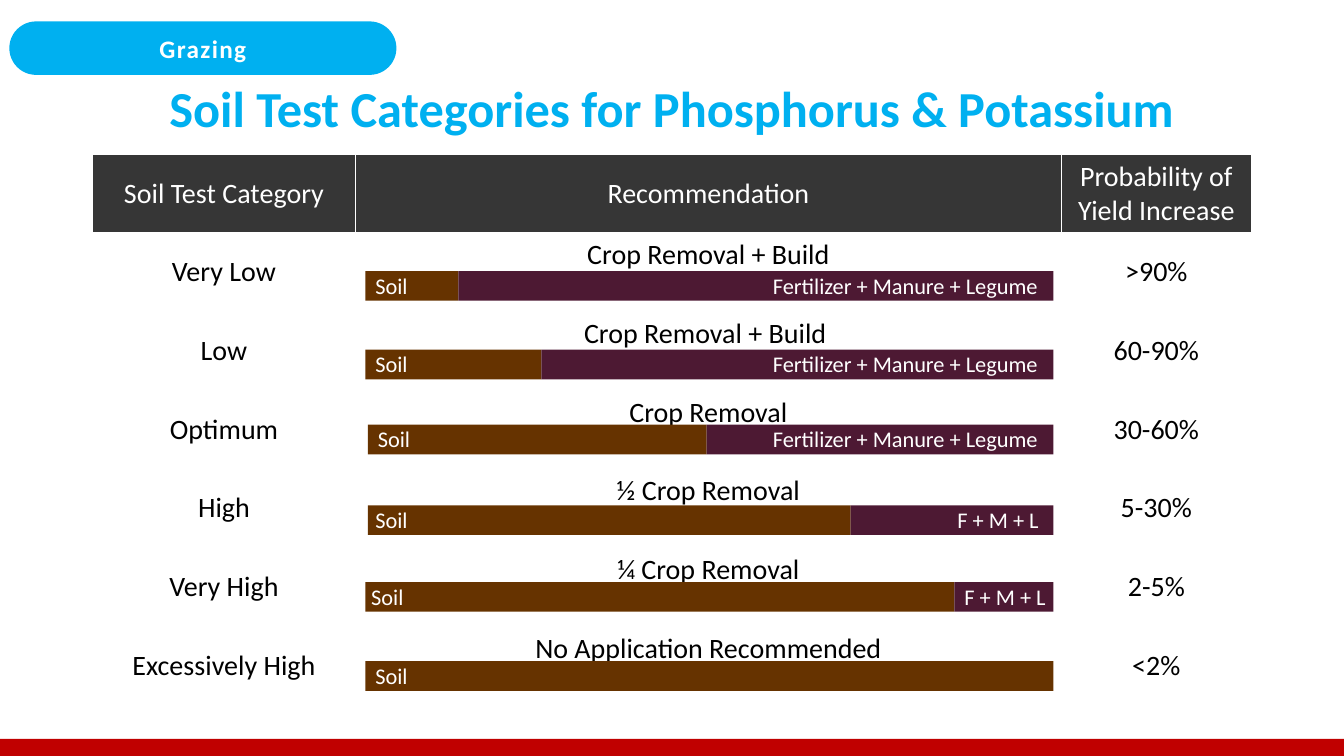
from collections import namedtuple
from dataclasses import dataclass

from lxml import etree
from pptx import Presentation
from pptx.dml.color import RGBColor
from pptx.enum.shapes import MSO_SHAPE
from pptx.enum.text import MSO_ANCHOR, MSO_AUTO_SIZE, PP_ALIGN
from pptx.util import Pt

RECTANGLE = MSO_SHAPE.RECTANGLE
ROUNDED = MSO_SHAPE.ROUNDED_RECTANGLE
LEFT, CENTER = PP_ALIGN.LEFT, PP_ALIGN.CENTER
TOP, MIDDLE = MSO_ANCHOR.TOP, MSO_ANCHOR.MIDDLE
FIT_SHAPE = MSO_AUTO_SIZE.SHAPE_TO_FIT_TEXT
TITLE_ONLY = 5

Box = namedtuple("Box", "left top width height")
Category = namedtuple(
    "Category", "name advice probability bar_left bar_top split label_left source")


@dataclass(frozen=True)
class Theme:
    font: str = "Calibri"
    white: str = "FFFFFF"
    black: str = "000000"
    sky: str = "00B0F0"
    red: str = "C00000"
    header: str = "363636"
    soil: str = "663300"
    amendment: str = "4D1933"
    title_size: float = 36
    table_size: float = 20
    tab_size: float = 18
    label_size: float = 16


THEME = Theme()
PAGE = Box(0, 0, 960, 540)
TABLE = Box(66, 110.2, 828, 393.4)
COLUMN_WIDTHS = (188, 504, 136)
HEADINGS = ("Soil Test Category", "Recommendation", "Probability of Yield Increase")

BAR_RIGHT = 752.4
BAR_HEIGHT = 21.2
LABEL_RISE = 3
LABEL_HEIGHT = 26.6
SOIL_LABEL_WIDTH = 43.5
FULL = "Fertilizer + Manure + Legume"
SHORT = "F + M + L"
LABEL_WIDTHS = {FULL: 207.4, SHORT: 75.6}

# Bar positions are measured from the page's left and top edges
CATEGORIES = (
    Category("Very Low", "Crop Removal + Build", ">90%", 261, 193.6, 327.4, 261, FULL),
    Category("Low", "Crop Removal + Build ", "60-90%", 261, 249.8, 386.8, 261, FULL),
    Category("Optimum", "Crop Removal", "30-60%", 262.8, 303.4, 504.7, 262.8, FULL),
    Category("High", "½ Crop Removal", "5-30%", 262.8, 361, 607.6, 261, SHORT),
    Category("Very High", "¼ Crop Removal", "2-5%", 261, 415.8, 681.8, 258, SHORT),
    Category("Excessively High", "No Application Recommended", "<2%",
             261, 472.3, BAR_RIGHT, 261, None),
)


def color(value):
    return RGBColor.from_string(value)


def write(frame, text, *, size, ink=THEME.white, bold=False, align=LEFT,
          anchor=TOP, spacing=None, tracking=None):
    """Put one formatted paragraph into a text frame."""
    frame.word_wrap = True
    frame.vertical_anchor = anchor
    para = frame.paragraphs[0]
    para.alignment = align
    if spacing:
        para.line_spacing = spacing
    span = para.add_run()
    span.text = text
    span.font.name = THEME.font
    span.font.size = Pt(size)
    span.font.bold = bold
    span.font.color.rgb = color(ink)
    if tracking:
        span.font._element.set("spc", str(round(tracking * 100)))


def add_block(page, box, fill, kind=RECTANGLE):
    block = page.shapes.add_shape(kind, *map(Pt, box))
    block.shadow.inherit = False
    block.fill.solid()
    block.fill.fore_color.rgb = color(fill)
    block.line.fill.background()
    return block


def add_label(page, box, text):
    label = page.shapes.add_textbox(*map(Pt, box))
    write(label.text_frame, text, size=THEME.label_size)
    label.text_frame.auto_size = FIT_SHAPE


def add_frame(page, box):
    """Section tab at the top and band along the bottom."""
    band = 12.2
    add_block(page, Box(box.left, box.top + box.height - band, box.width, band), THEME.red)
    tab = add_block(page, Box(box.left + 6.7, box.top + 15.3, 276.5, 38.2),
                    THEME.sky, ROUNDED)
    tab.adjustments[0] = 0.5
    write(tab.text_frame, "Grazing", size=THEME.tab_size, bold=True,
          align=CENTER, anchor=MIDDLE, tracking=1)


def add_title(page, box):
    title = page.shapes.title
    title.left, title.top, title.width, title.height = map(Pt, box)
    write(title.text_frame, "Soil Test Categories for Phosphorus & Potassium",
          size=THEME.title_size, ink=THEME.sky, bold=True,
          align=CENTER, anchor=MIDDLE, spacing=0.9)


def add_category_table(page, box):
    rows = [HEADINGS] + [(item.name, item.advice, item.probability) for item in CATEGORIES]
    table = page.shapes.add_table(len(rows), len(HEADINGS), *map(Pt, box)).table
    table.horz_banding = False
    for column, width in zip(table.columns, COLUMN_WIDTHS):
        column.width = Pt(width)
    for row_index, texts in enumerate(rows):
        heading = row_index == 0
        table.rows[row_index].height = Pt(box.height / len(rows))
        for column_index, text in enumerate(texts):
            cell = table.cell(row_index, column_index)
            if heading:
                cell.fill.solid()
                cell.fill.fore_color.rgb = color(THEME.header)
            else:
                cell.fill.background()
            write(cell.text_frame, text, size=THEME.table_size, align=CENTER,
                  ink=THEME.white if heading else THEME.black)
            advice = column_index == 1 and not heading
            cell.vertical_anchor = TOP if advice else MIDDLE


def add_supply_bar(page, box, item):
    """Soil share, then the share supplied by amendments."""
    label_top = box.top - LABEL_RISE
    right = box.left + box.width
    add_block(page, box._replace(width=item.split - box.left), THEME.soil)
    add_label(page, Box(item.label_left, label_top, SOIL_LABEL_WIDTH, LABEL_HEIGHT), "Soil")
    if item.source:
        add_block(page, box._replace(left=item.split, width=right - item.split),
                  THEME.amendment)
        width = LABEL_WIDTHS[item.source]
        left = max(item.split, right - width)
        add_label(page, Box(left, label_top, width, LABEL_HEIGHT), item.source)


def main():
    deck = Presentation()
    deck.slide_width, deck.slide_height = Pt(PAGE.width), Pt(PAGE.height)
    page = deck.slides.add_slide(deck.slide_layouts[TITLE_ONLY])
    add_frame(page, PAGE)
    add_title(page, Box(66, 39.4, 828, 80.6))
    add_category_table(page, TABLE)
    for item in CATEGORIES:
        bar = Box(item.bar_left, item.bar_top, BAR_RIGHT - item.bar_left, BAR_HEIGHT)
        add_supply_bar(page, bar, item)
    deck.save("out.pptx")


if __name__ == "__main__":
    main()
